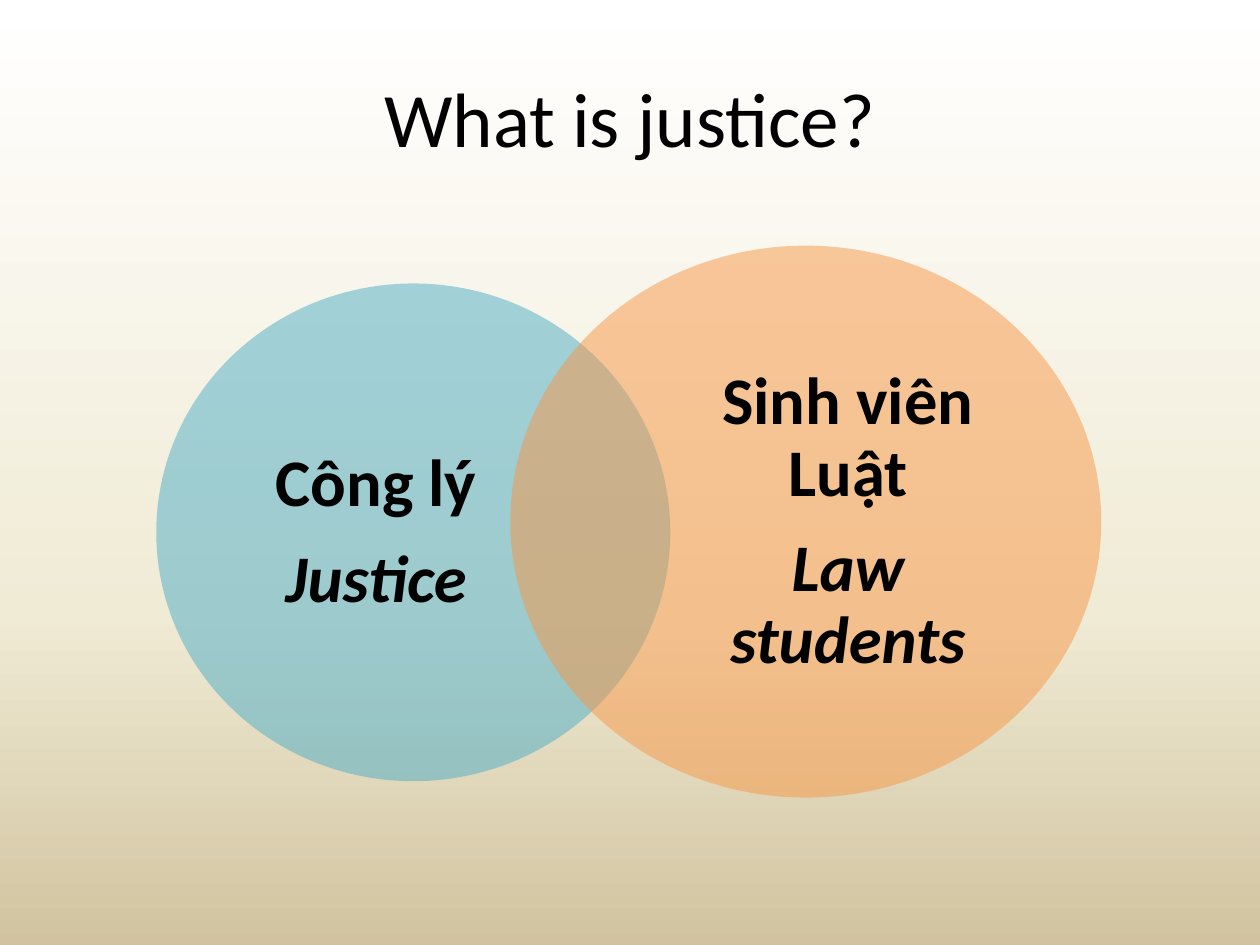
from copy import deepcopy
from dataclasses import dataclass

from lxml import etree
from pptx import Presentation
from pptx.dml.color import RGBColor
from pptx.enum import shapes, text
from pptx.oxml.ns import qn
from pptx.util import Inches, Pt

FONT = "Calibri"
BLACK = "000000"
BACKGROUND = [(0, "FFFFFF"), (0.65, "F0EBD5"), (1, "D1C39F")]

Box = tuple[float, float, float, float]


@dataclass
class VennSet:
    circle: Box
    label: Box
    color: str
    vietnamese: str
    english: str


VENN_SETS = [
    VennSet((1.24, 2.25, 4.08, 3.95), (1.81, 2.72, 2.35, 3.02),
            "4BACC6", "Công lý", "Justice"),
    VennSet((4.05, 1.95, 4.69, 4.38), (5.38, 2.47, 2.7, 3.35),
            "F79646", "Sinh viên Luật", "Law students"),
]


def rgb(color: str) -> RGBColor:
    return RGBColor.from_string(color)


def paint_background(slide) -> None:
    fill = slide.background.fill
    fill.gradient()
    fill.gradient_angle = 270  # counter-clockwise, so top to bottom
    stop_list = slide.element.find(".//" + qn("a:gsLst"))
    stop_list.append(deepcopy(stop_list[0]))
    for stop, (position, color) in zip(fill.gradient_stops, BACKGROUND):
        stop.position = position
        stop.color.rgb = rgb(color)


def add_text(slide, box: Box, lines: list[str], size: float):
    frame = slide.shapes.add_textbox(*map(Inches, box)).text_frame
    frame.word_wrap = True
    frame.vertical_anchor = text.MSO_ANCHOR.MIDDLE
    frame.text = "\n".join(lines)
    for paragraph in frame.paragraphs:
        paragraph.alignment = text.PP_ALIGN.CENTER
        font = paragraph.runs[0].font
        font.name, font.size = FONT, Pt(size)
        font.color.rgb = rgb(BLACK)
    return frame


def add_circle(slide, box: Box, color: str, opacity: int) -> None:
    circle = slide.shapes.add_shape(shapes.MSO_SHAPE.OVAL, *map(Inches, box))
    circle.shadow.inherit = False
    circle.line.fill.background()
    circle.fill.solid()
    circle.fill.fore_color.rgb = rgb(color)
    tint = circle.element.spPr.find(qn("a:solidFill"))[0]
    etree.SubElement(tint, qn("a:alpha"), val=str(opacity * 1000))


def add_venn_set(slide, venn_set: VennSet) -> None:
    add_circle(slide, venn_set.circle, venn_set.color, 50)
    label = add_text(slide, venn_set.label,
                     [venn_set.vietnamese, venn_set.english], 38)
    label.margin_left = label.margin_right = 0
    label.margin_top = label.margin_bottom = 0
    for paragraph in label.paragraphs:
        paragraph.line_spacing = 0.9
        paragraph.space_after = Pt(13.3)
        paragraph.runs[0].font.bold = True
    label.paragraphs[1].runs[0].font.italic = True


def main() -> None:
    deck = Presentation()
    deck.slide_width, deck.slide_height = Inches(10), Inches(7.5)
    slide = deck.slides.add_slide(deck.slide_layouts[6])
    paint_background(slide)

    # Title
    add_text(slide, (0.5, 0.3, 9, 1.25), ["What is justice?"], 44)

    # Overlapping sets
    for venn_set in VENN_SETS:
        add_venn_set(slide, venn_set)

    deck.save("out.pptx")


if __name__ == "__main__":
    main()
